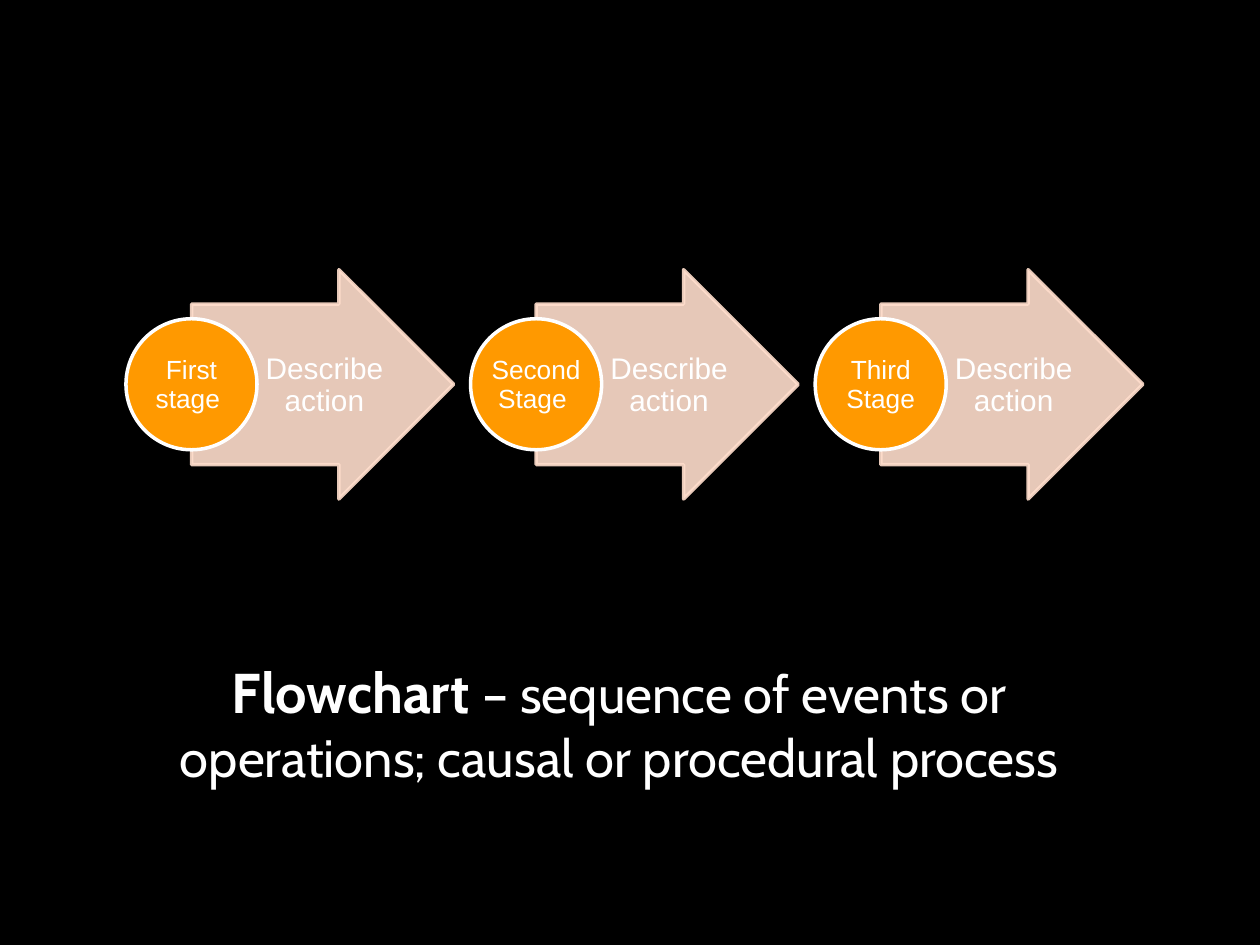
import dataclasses

import pptx
import pptx.dml.color
import pptx.enum.shapes
import pptx.enum.text
import pptx.oxml.ns
import pptx.util
from lxml import etree
from pptx.util import Inches


@dataclasses.dataclass(frozen=True)
class Theme:
    background: str = "000000"
    arrow: str = "FFDECC"
    circle: str = "FF9900"
    text: str = "FFFFFF"
    arrow_alpha: int = 90
    line_width: float = 2
    action_size: float = 17
    stage_size: float = 15
    term_size: float = 32
    caption_size: float = 30
    diagram_font: str = "Arial"
    caption_font: str = "Cabin"


@dataclasses.dataclass(frozen=True)
class Span:
    text: str
    size: float
    font: str
    bold: bool = False


@dataclasses.dataclass(frozen=True)
class Area:
    left: float
    top: float
    width: float
    height: float

    def lengths(self) -> list[pptx.util.Length]:
        return [Inches(value) for value in dataclasses.astuple(self)]


@dataclasses.dataclass(frozen=True)
class Stage:
    name: str
    action: str


THEME = Theme()
STAGES = [
    Stage("First stage ", "Describe action"),
    Stage("Second Stage ", "Describe action"),
    Stage("Third Stage", "Describe action"),
]
FIRST_LEFT = 1.0
STAGE_STEP = 2.735


def color(value: str) -> pptx.dml.color.RGBColor:
    return pptx.dml.color.RGBColor.from_string(value)


def set_alpha(fill: pptx.dml.fill.FillFormat, value: str, percent: int) -> None:
    """Apply a solid colour and its opacity to a fill."""
    fill.solid()
    fill.fore_color.rgb = color(value)
    tag = pptx.oxml.ns.qn("a:alpha")
    # The colour element is the only child of the solid fill
    solid = fill._xPr.find(pptx.oxml.ns.qn("a:solidFill"))
    etree.SubElement(solid[0], tag).set("val", str(percent * 1000))


def add_outline(page: pptx.slide.Slide, kind: pptx.enum.shapes.MSO_SHAPE, area: Area,
                fill: str, line: str, alpha: int = 100) -> pptx.shapes.autoshape.Shape:
    shape = page.shapes.add_shape(kind, *area.lengths())
    shape.shadow.inherit = False
    shape.line.width = pptx.util.Pt(THEME.line_width)
    set_alpha(shape.fill, fill, alpha)
    set_alpha(shape.line.fill, line, alpha)
    return shape


def add_text(page: pptx.slide.Slide, area: Area, spans: list[Span],
             margins: tuple[float, float, float, float] = (0.1, 0.05, 0.1, 0.05),
             anchor: pptx.enum.text.MSO_ANCHOR = pptx.enum.text.MSO_ANCHOR.MIDDLE,
             line_spacing: float = 1.0) -> None:
    frame = page.shapes.add_textbox(*area.lengths()).text_frame
    frame.word_wrap = True
    frame.vertical_anchor = anchor
    (frame.margin_left, frame.margin_top,
     frame.margin_right, frame.margin_bottom) = map(Inches, margins)
    para = frame.paragraphs[0]
    para.alignment = pptx.enum.text.PP_ALIGN.CENTER
    para.line_spacing = line_spacing
    for span in spans:
        run = para.add_run()
        run.text = span.text
        run.font.size = pptx.util.Pt(span.size)
        run.font.name = span.font
        run.font.bold = span.bold
        run.font.color.rgb = color(THEME.text)


def add_stage(page: pptx.slide.Slide, stage: Stage, left: float) -> None:
    # Arrow with the action
    arrow = add_outline(page, pptx.enum.shapes.MSO_SHAPE.RIGHT_ARROW,
                        Area(left + 0.52, 2.14, 2.08, 1.82),
                        THEME.arrow, THEME.arrow, THEME.arrow_alpha)
    arrow.adjustments[0] = 0.7
    arrow.adjustments[1] = 0.5
    add_text(page, Area(left + 1.05, 2.42, 1.02, 1.28),
             [Span(stage.action, THEME.action_size, THEME.diagram_font)],
             margins=(0.05, 0.01, 0.02, 0.01), line_spacing=0.9)

    # Circle with the stage name
    add_outline(page, pptx.enum.shapes.MSO_SHAPE.OVAL, Area(left, 2.53, 1.04, 1.04),
                THEME.circle, THEME.text)
    add_text(page, Area(left + 0.15, 2.69, 0.74, 0.74),
             [Span(stage.name, THEME.stage_size, THEME.diagram_font)],
             margins=(0.01, 0.01, 0.01, 0.01), line_spacing=0.9)


def main() -> None:
    deck = pptx.Presentation()
    deck.slide_width, deck.slide_height = Inches(10), Inches(7.5)
    page = deck.slides.add_slide(deck.slide_layouts[6])
    page.background.fill.solid()
    page.background.fill.fore_color.rgb = color(THEME.background)

    # Flow of stages
    for index, stage in enumerate(STAGES):
        add_stage(page, stage, FIRST_LEFT + index * STAGE_STEP)

    # Caption
    add_text(page, Area(0.83, 5.17, 8.17, 1.14), [
        Span("Flowchart ", THEME.term_size, THEME.caption_font, bold=True),
        Span("– sequence of events or operations; causal or procedural process",
             THEME.caption_size, THEME.caption_font),
    ], anchor=pptx.enum.text.MSO_ANCHOR.TOP)

    deck.save("out.pptx")


if __name__ == "__main__":
    main()
